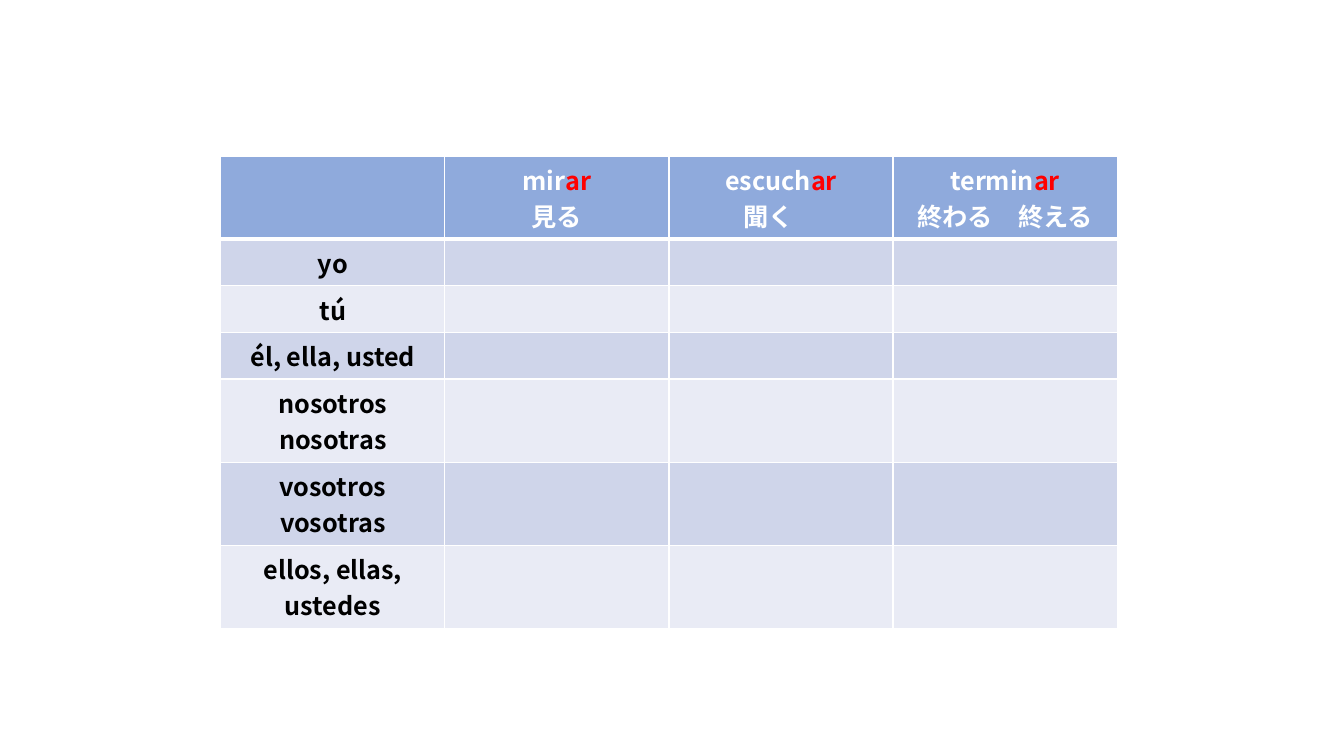
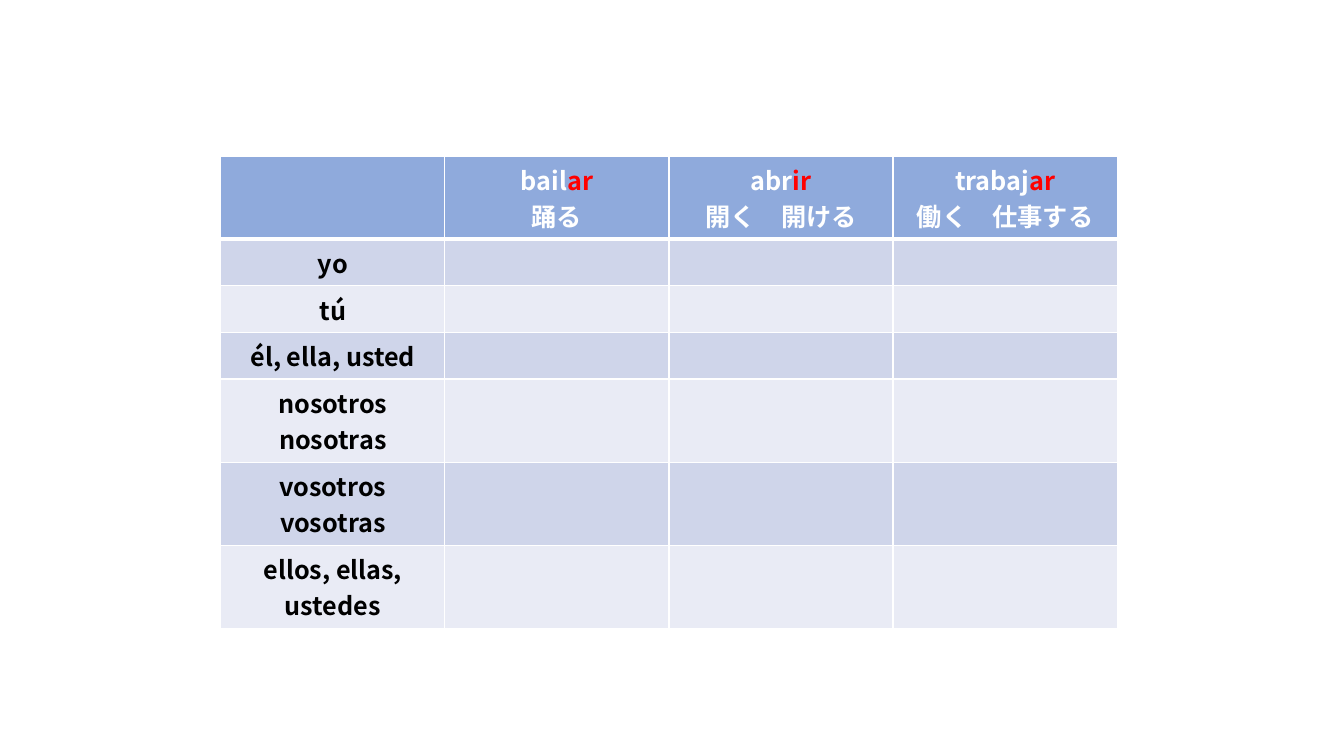
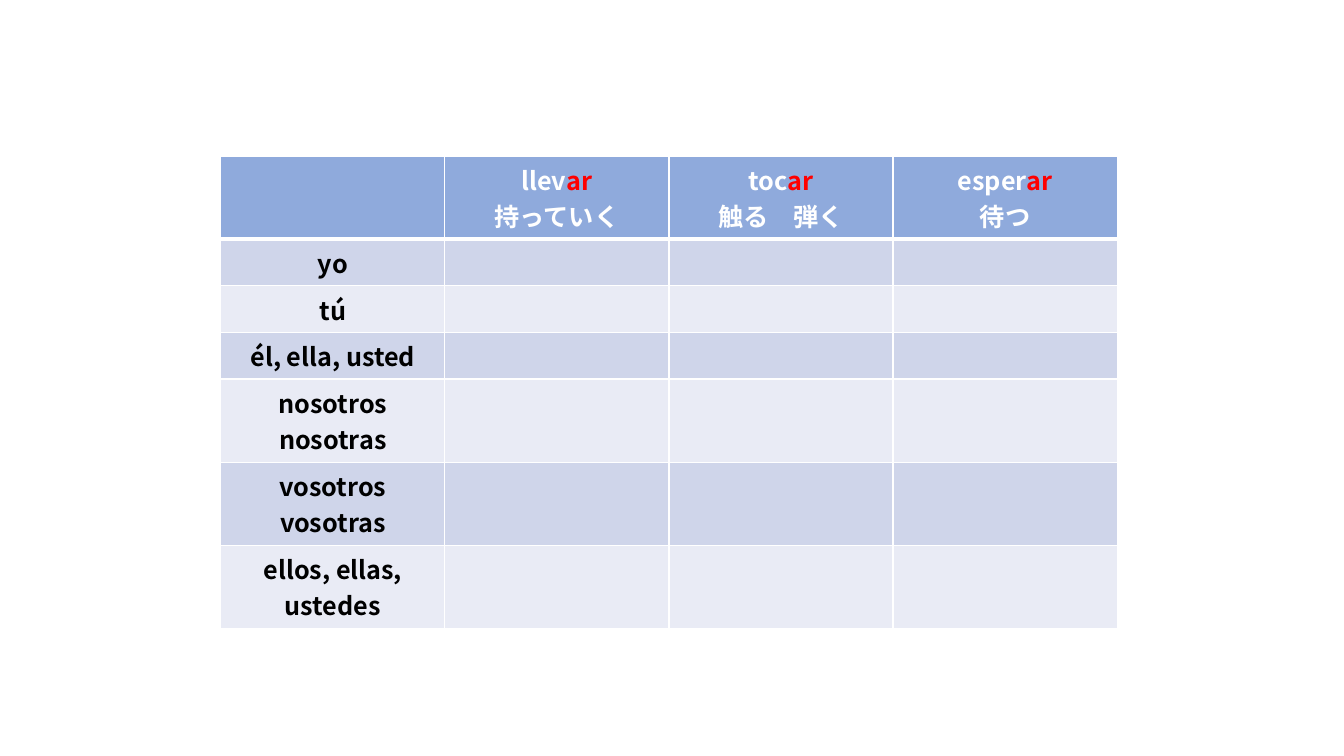
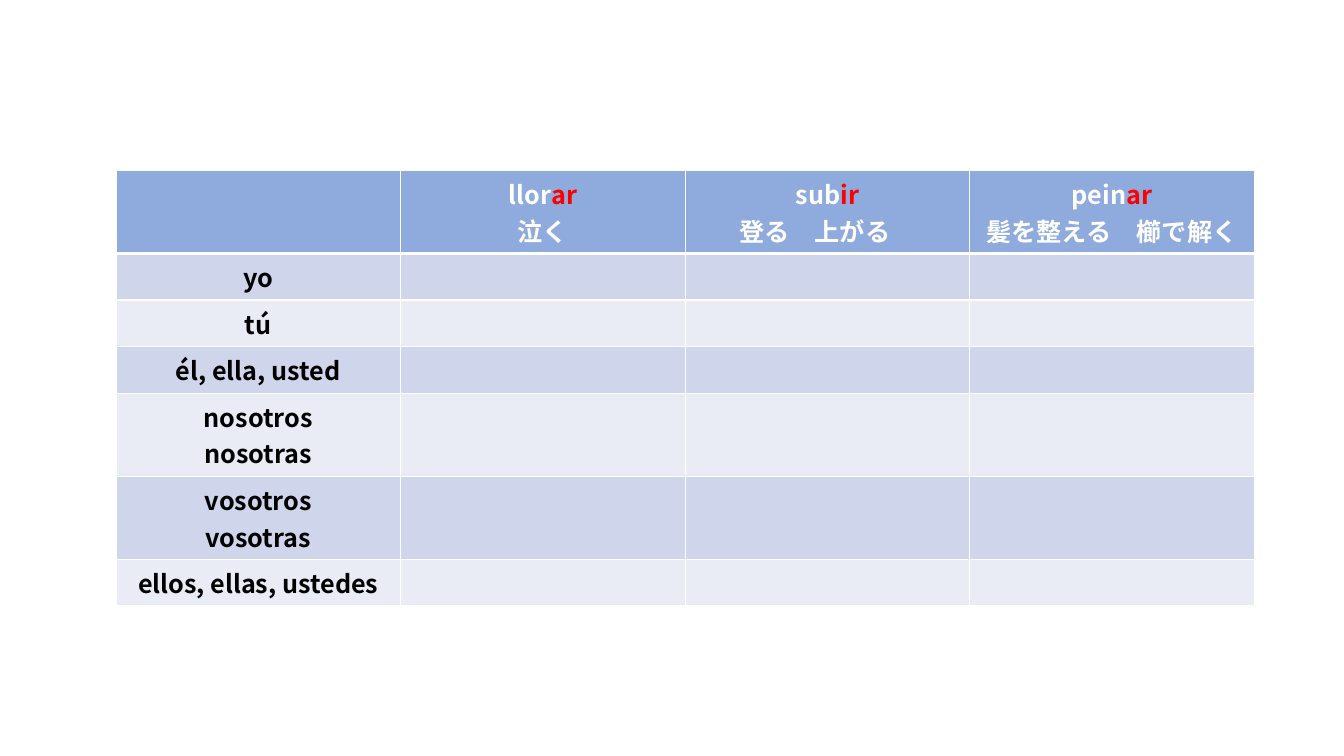
from lxml.etree import SubElement
from pptx import Presentation
from pptx.dml.color import RGBColor
from pptx.enum.text import PP_ALIGN as Align
from pptx.oxml import parse_xml
from pptx.oxml.ns import nsdecls, qn
from pptx.util import Inches, Pt

FONT = "Noto Sans CJK JP"
TEXT_SIZE = 18
ROW_HEIGHT = 0.41
WHITE, BLACK, RED = "FFFFFF", "000000", "FF0000"
HEADER_FILL = "8FAADC"
BAND_FILLS = ("CFD5EA", "E9EBF5")
HEADER_BORDERS = {"lnL": 1, "lnR": 1, "lnT": 1, "lnB": 3}

PRONOUNS = [
    ["yo"],
    ["tú"],
    ["él, ella, usted"],
    ["nosotros", "nosotras"],
    ["vosotros", "vosotras"],
    ["ellos, ellas, ustedes"],
]

# Boxes are left, top, width, height in inches.
STANDARD_BOX = (2.19, 1.55, 8.89, 4.02)
WIDE_BOX = (1.15, 1.69, 11.29, 3.72)

# Each verb is stem, ending, meaning.
SLIDES = [
    (STANDARD_BOX, [("mir", "ar", "見る"),
                    ("escuch", "ar", "聞く　"),
                    ("termin", "ar", "終わる　終える")]),
    (STANDARD_BOX, [("bail", "ar", "踊る"),
                    ("abr", "ir", "開く　開ける"),
                    ("trabaj", "ar", "働く　仕事する")]),
    (STANDARD_BOX, [("llev", "ar", "持っていく"),
                    ("toc", "ar", "触る　弾く"),
                    ("esper", "ar", "待つ")]),
    (WIDE_BOX, [("llor", "ar", "泣く"),
                ("sub", "ir", "登る　上がる　"),
                ("pein", "ar", "髪を整える　櫛で解く")]),
]


def color(hex_string):
    return RGBColor.from_string(hex_string)


def fill_cell(cell, hex_string):
    cell.fill.solid()
    cell.fill.fore_color.rgb = color(hex_string)


def write_cell(cell, lines):
    """Write centred lines, each a list of (text, colour) runs."""
    frame = cell.text_frame
    for index, line in enumerate(lines):
        paragraph = frame.add_paragraph() if index else frame.paragraphs[0]
        paragraph.alignment = Align.CENTER
        for text, hex_string in line:
            run = paragraph.add_run()
            run.text = text
            font = run.font
            font.size, font.bold, font.name = Pt(TEXT_SIZE), True, FONT
            font.color.rgb = color(hex_string)
            SubElement(run._r.get_or_add_rPr(), qn("a:ea"), typeface=FONT)


def border_header(cell):
    properties = cell._tc.get_or_add_tcPr()
    for index, (side, points) in enumerate(HEADER_BORDERS.items()):
        properties.insert(index, parse_xml(
            f'<a:{side} {nsdecls("a")} w="{Pt(points)}"><a:solidFill>'
            f'<a:srgbClr val="{WHITE}"/></a:solidFill></a:{side}>'))


def add_conjugation_table(slide, box, verbs):
    left, top, width, height = map(Inches, box)
    shape = slide.shapes.add_table(
        len(PRONOUNS) + 1, len(verbs) + 1, left, top, width, height)
    table = shape.table
    for row in table.rows:
        row.height = Inches(ROW_HEIGHT)
    shape.height = height  # rows grow to fit their text

    for cell in table.rows[0].cells:
        fill_cell(cell, HEADER_FILL)
        border_header(cell)
    for column, (stem, ending, meaning) in enumerate(verbs, 1):
        write_cell(table.cell(0, column),
                   [[(stem, WHITE), (ending, RED)], [(meaning, WHITE)]])

    for index, pronouns in enumerate(PRONOUNS):
        for cell in table.rows[index + 1].cells:
            fill_cell(cell, BAND_FILLS[index % 2])
        write_cell(table.cell(index + 1, 0),
                   [[(pronoun, BLACK)] for pronoun in pronouns])


def main():
    presentation = Presentation()
    presentation.slide_width = Inches(13.33)
    presentation.slide_height = Inches(7.5)
    blank_layout = presentation.slide_layouts[6]
    for box, verbs in SLIDES:
        slide = presentation.slides.add_slide(blank_layout)
        add_conjugation_table(slide, box, verbs)
    presentation.save("out.pptx")


if __name__ == "__main__":
    main()
